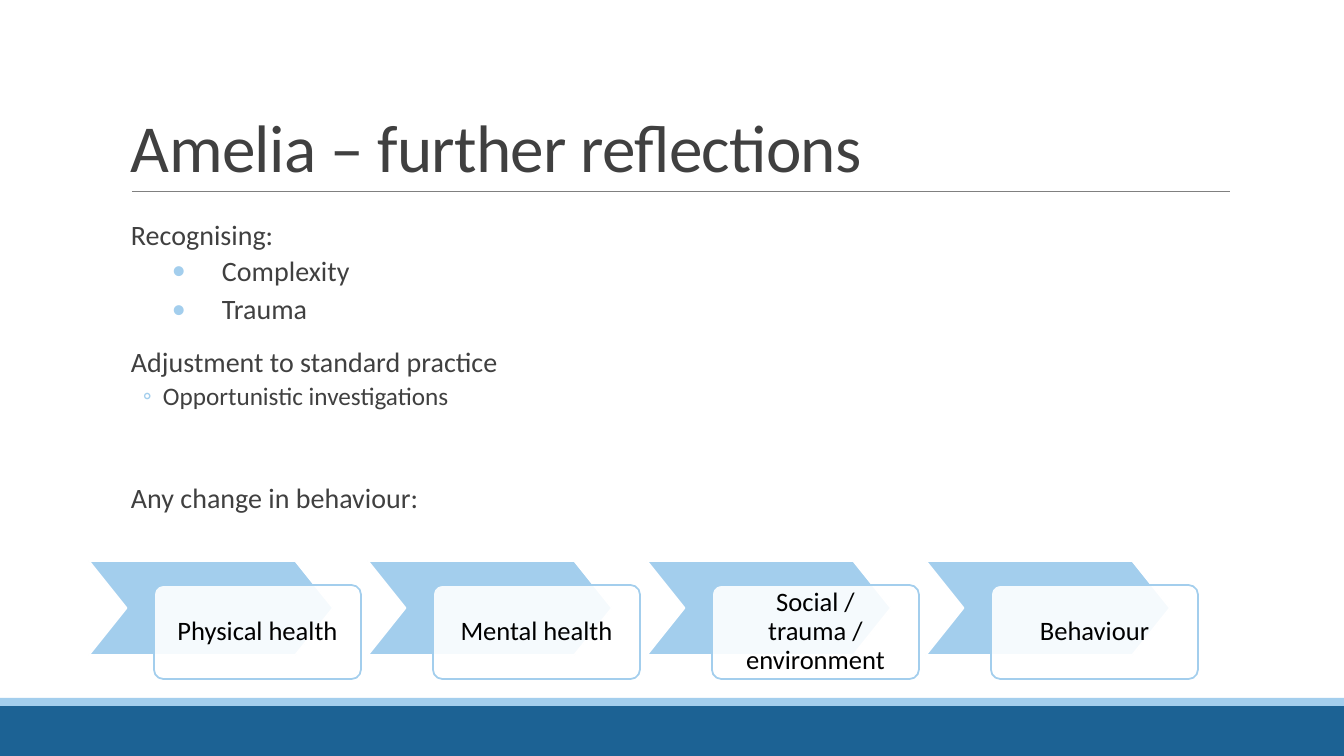
"""Builds the slide of further reflections on Amelia."""
from lxml import etree
from pptx import Presentation
from pptx import util as u
from pptx.dml.color import RGBColor
from pptx.enum import shapes, text
from pptx.oxml import ns

NAVY = RGBColor(0x1C, 0x62, 0x94)
SKY = RGBColor(0xA3, 0xCE, 0xED)
GREY = RGBColor(0x80, 0x80, 0x80)
CHARCOAL = RGBColor(0x40, 0x40, 0x40)
WHITE = RGBColor(0xFF, 0xFF, 0xFF)
BLACK = RGBColor(0, 0, 0)

WIDTH, HEIGHT = 1344, 756
STEP = 279
THEMES = ["Physical health", "Mental health", "Social / trauma / environment", "Behaviour"]
REFLECTIONS = [
    ("Recognising:", 20, 10, 0, "", 12, 2),
    ("Complexity", 20, 101, -50, "•", 2, 4),
    ("Trauma", 20, 101, -50, "•", 2, 4),
    ("Adjustment to standard practice", 20, 10, 0, "", 12, 2),
    ("Opportunistic investigations", 18, 42, -20, "◦", 2, 4),
    ("Any change in behaviour:", 20, 10, 0, "", 48, 2),
]


def px(length):
    """Turn pixels into EMU."""
    return u.Emu(round(length * 914400 / 100.8))


class Painter:
    """Holds the style and the current page."""

    def __init__(self, page, font):
        self.page = page
        self.font = font

    def shape(self, kind, left, top, width, height, fill, line=None, adjust=None, alpha=None):
        """Draw a preset shape."""
        box = self.page.shapes.add_shape(kind, px(left), px(top), px(width), px(height))
        box.shadow.inherit = False
        box.fill.solid()
        box.fill.fore_color.rgb = fill
        if alpha is not None:
            colour = box._element.spPr.find(".//" + ns.qn("a:srgbClr"))
            etree.SubElement(colour, ns.qn("a:alpha")).set("val", str(alpha * 1000))
        if line is None:
            box.line.fill.background()
        else:
            box.line.color.rgb = line
            box.line.width = u.Pt(1.25)
        if adjust is not None:
            box.adjustments[0] = adjust
        return box

    def rule(self, left, right, top, colour):
        """Draw a thin horizontal line."""
        line = self.page.shapes.add_connector(
            shapes.MSO_CONNECTOR.STRAIGHT, px(left), px(top), px(right), px(top))
        line.line.color.rgb = colour
        line.line.width = u.Pt(0.5)
        etree.SubElement(line._element.spPr, ns.qn("a:effectLst"))

    def text_box(self, left, top, width, height, anchor, side):
        """Add an empty text box and return its frame."""
        box = self.page.shapes.add_textbox(px(left), px(top), px(width), px(height))
        return self.frame(box, anchor, side, 5)

    def frame(self, box, anchor, side, edge):
        """Set wrapping, anchor and insets of a text frame."""
        frame = box.text_frame
        frame.word_wrap = True
        frame.vertical_anchor = anchor
        frame.margin_left = frame.margin_right = px(side)
        frame.margin_top = frame.margin_bottom = px(edge)
        return frame

    def span(self, para, words, size, colour, spacing=0.9, align=text.PP_ALIGN.LEFT):
        """Add one styled run to a paragraph."""
        para.alignment = align
        para.line_spacing = spacing
        span = para.add_run()
        span.text = words
        span.font.size = u.Pt(size)
        span.font.name = self.font
        span.font.color.rgb = colour
        return span

    def indent(self, para, margin, hanging, bullet):
        """Indent a paragraph and give it a coloured bullet."""
        props = para._p.get_or_add_pPr()
        props.set("marL", str(px(margin)))
        props.set("indent", str(px(hanging)))
        if bullet:
            colour = etree.SubElement(props, ns.qn("a:buClr"))
            etree.SubElement(colour, ns.qn("a:srgbClr")).set("val", str(SKY))
            etree.SubElement(props, ns.qn("a:buFont")).set("typeface", self.font)
            etree.SubElement(props, ns.qn("a:buChar")).set("char", bullet)

    def theme(self, left, words):
        """Draw a chevron with its labelled card."""
        self.shape(shapes.MSO_SHAPE.CHEVRON, left, 561, 244, 94, SKY, WHITE, 0.4)
        card = self.shape(shapes.MSO_SHAPE.ROUNDED_RECTANGLE, left + 65, 585, 207, 94,
                          WHITE, SKY, 0.1, 90)
        frame = self.frame(card, text.MSO_ANCHOR.MIDDLE, 15, 15)
        self.span(frame.paragraphs[0], words, 19, BLACK, align=text.PP_ALIGN.CENTER)


def main():
    """Build and save the deck."""
    deck = Presentation()
    deck.slide_width, deck.slide_height = px(WIDTH), px(HEIGHT)
    painter = Painter(deck.slides.add_slide(deck.slide_layouts[6]), "Calibri")

    painter.shape(shapes.MSO_SHAPE.RECTANGLE, 0, 706, WIDTH, 50, NAVY)
    painter.shape(shapes.MSO_SHAPE.RECTANGLE, 0, 698, WIDTH, 8, SKY)
    painter.rule(132, 1230, 191, GREY)

    title = painter.text_box(121, 31, 1109, 160, text.MSO_ANCHOR.BOTTOM, 10)
    span = painter.span(title.paragraphs[0], "Amelia – further reflections", 48, CHARCOAL, 0.85)
    span._r.get_or_add_rPr().set("spc", "-50")

    body = painter.text_box(121, 216, 1076, 431, text.MSO_ANCHOR.TOP, 0)
    for index, (words, size, margin, hanging, bullet, before, after) in enumerate(REFLECTIONS):
        para = body.add_paragraph() if index else body.paragraphs[0]
        painter.span(para, words, size, CHARCOAL)
        para.space_before, para.space_after = u.Pt(before), u.Pt(after)
        painter.indent(para, margin, hanging, bullet)

    for index, words in enumerate(THEMES):
        painter.theme(89 + index * STEP, words)

    deck.save("out.pptx")


if __name__ == "__main__":
    main()
